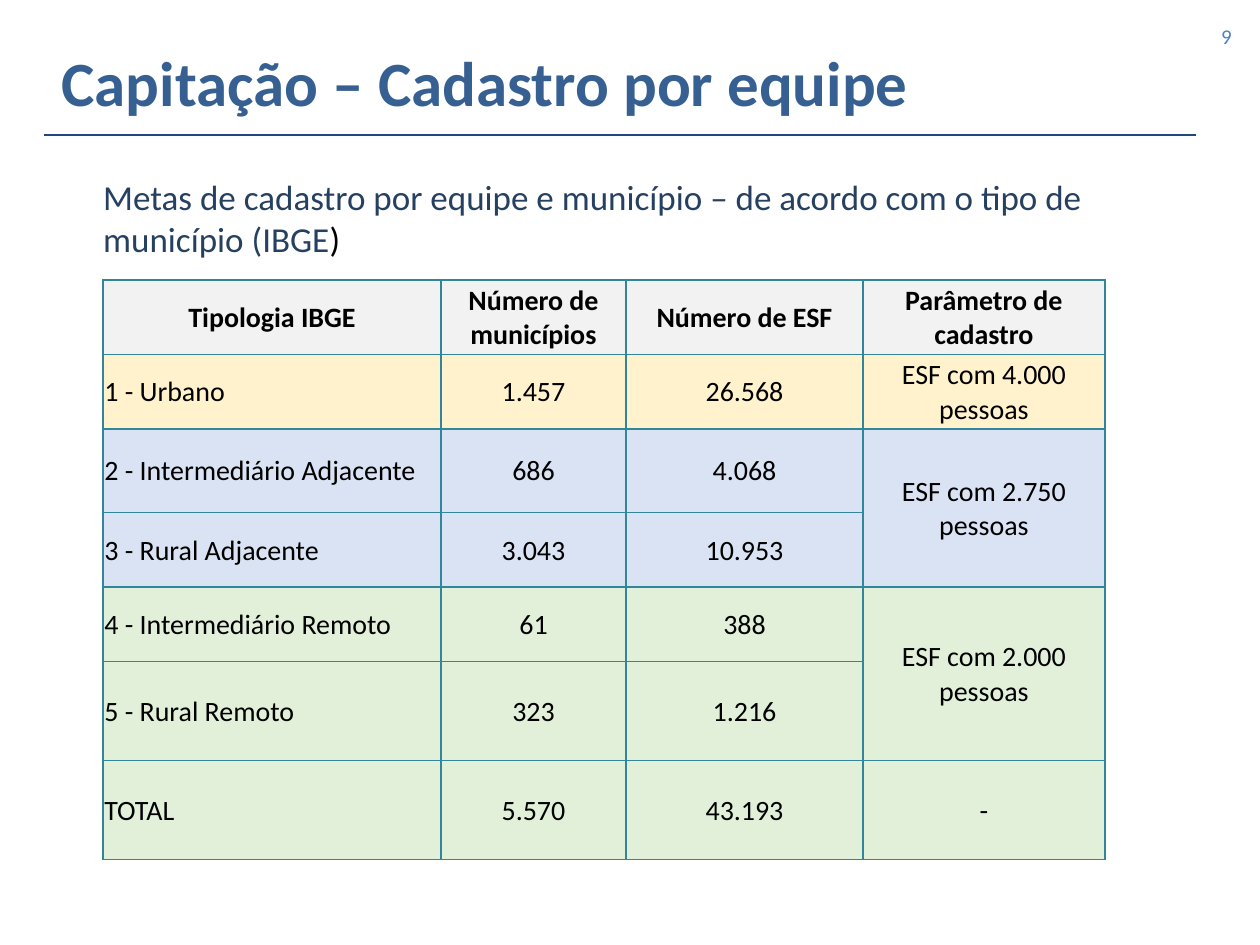
from lxml import etree
from pptx import Presentation
from pptx.dml.color import RGBColor
from pptx.enum.shapes import MSO_CONNECTOR
from pptx.enum.text import MSO_ANCHOR, MSO_AUTO_SIZE, PP_ALIGN
from pptx.oxml.ns import qn
from pptx.util import Pt

LEFT, CENTER, RIGHT = PP_ALIGN.LEFT, PP_ALIGN.CENTER, PP_ALIGN.RIGHT
MIDDLE = MSO_ANCHOR.MIDDLE
NO_FIT = MSO_AUTO_SIZE.NONE
STRAIGHT = MSO_CONNECTOR.STRAIGHT
TITLE_ONLY = 5
FONT = "Calibri"

COLORS = {
    "title": "376092",
    "subtitle": "254061",
    "text": "000000",
    "number": "4F81BD",
    "rule": "1F497D",
    "border": "31869B",
    "header": "F2F2F2",
    "urban": "FFF2CC",
    "adjacent": "DAE3F3",
    "remote": "E2F0D9",
}

COLUMN_WIDTHS = [193, 105.8, 135.4, 138.2]
ROW_HEIGHTS = [42.6, 42.6, 47.8, 42.6, 42.6, 56.5, 56.5]

# Fill name, then the cell texts; None continues the cell above
ROWS = [
    ("header", ["Tipologia IBGE", "Número de municípios", "Número de ESF",
                "Parâmetro de cadastro"]),
    ("urban", ["1 - Urbano", "1.457", "26.568", "ESF com 4.000 pessoas"]),
    ("adjacent", ["2 - Intermediário Adjacente", "686", "4.068",
                  "ESF com 2.750 pessoas"]),
    ("adjacent", ["3 - Rural Adjacente", "3.043", "10.953", None]),
    ("remote", ["4 - Intermediário Remoto", "61", "388",
                "ESF com 2.000 pessoas"]),
    ("remote", ["5 - Rural Remoto", "323", "1.216", None]),
    ("remote", ["TOTAL", "5.570", "43.193", "-"]),
]


def color(name):
    return RGBColor.from_string(COLORS[name])


def set_attributes(target, values):
    for name, value in values.items():
        setattr(target, name, value)


def add_span(para, text, size, color_name, bold=False):
    span = para.add_run()
    span.text = text
    set_attributes(span.font, {"name": FONT, "size": Pt(size), "bold": bold})
    span.font.color.rgb = color(color_name)


def format_frame(frame, inset=None):
    values = {"word_wrap": True, "auto_size": NO_FIT, "vertical_anchor": MIDDLE}
    if inset is not None:
        for side in ("left", "right", "top", "bottom"):
            values[f"margin_{side}"] = Pt(inset)
    set_attributes(frame, values)


def add_title(page, text):
    title = page.shapes.title
    set_attributes(title, {"left": Pt(28), "top": Pt(21),
                           "width": Pt(691), "height": Pt(56)})
    format_frame(title.text_frame)
    para = title.text_frame.paragraphs[0]
    set_attributes(para, {"alignment": LEFT, "line_spacing": 0.9})
    add_span(para, text, 36, "title", bold=True)


def add_text(page, place, spans, size, alignment=LEFT, inset=None):
    box = page.shapes.add_textbox(*map(Pt, place))
    format_frame(box.text_frame, inset)
    para = box.text_frame.paragraphs[0]
    para.alignment = alignment
    for text, color_name in spans:
        add_span(para, text, size, color_name)


def add_rule(page, left, right, height):
    rule = page.shapes.add_connector(
        STRAIGHT, Pt(left), Pt(height), Pt(right), Pt(height))
    rule.line.width = Pt(1)
    rule.line.color.rgb = color("rule")
    etree.SubElement(rule._element.spPr, qn("a:effectLst"))


def add_borders(cell):
    properties = cell._tc.get_or_add_tcPr()
    for side in ("a:lnL", "a:lnR", "a:lnT", "a:lnB"):
        line = etree.SubElement(properties, qn(side), w=str(Pt(1)))
        fill = etree.SubElement(line, qn("a:solidFill"))
        etree.SubElement(fill, qn("a:srgbClr"), val=COLORS["border"])


def format_cell(cell, fill_name):
    set_attributes(cell, {"vertical_anchor": MIDDLE, "margin_left": Pt(0.7),
                          "margin_right": Pt(0.7), "margin_top": Pt(0.7),
                          "margin_bottom": Pt(0)})
    add_borders(cell)
    cell.fill.solid()
    cell.fill.fore_color.rgb = color(fill_name)


def add_target_table(page, left, top):
    table = page.shapes.add_table(
        len(ROWS), len(COLUMN_WIDTHS), Pt(left), Pt(top),
        Pt(sum(COLUMN_WIDTHS)), Pt(sum(ROW_HEIGHTS))).table
    set_attributes(table, {"first_row": False, "horz_banding": False})
    for column, width in zip(table.columns, COLUMN_WIDTHS):
        column.width = Pt(width)
    for row, height in zip(table.rows, ROW_HEIGHTS):
        row.height = Pt(height)

    for row_index, (fill_name, texts) in enumerate(ROWS):
        is_header = row_index == 0
        for column_index, text in enumerate(texts):
            cell = table.cell(row_index, column_index)
            format_cell(cell, fill_name)
            if text is None:
                table.cell(row_index - 1, column_index).merge(cell)
                continue
            para = cell.text_frame.paragraphs[0]
            para.alignment = CENTER if is_header or column_index else LEFT
            add_span(para, text, 16, "text", bold=is_header)


def main():
    deck = Presentation()
    set_attributes(deck, {"slide_width": Pt(720), "slide_height": Pt(540)})
    page = deck.slides.add_slide(deck.slide_layouts[TITLE_ONLY])

    # Heading
    add_title(page, "Capitação – Cadastro por equipe")
    add_rule(page, 25.2, 683.3, 77)

    # Subtitle and table of targets
    subtitle = ("Metas de cadastro por equipe e município – de acordo com "
                "o tipo de município (IBGE")
    add_text(page, (59, 100, 629, 48.5),
             [(subtitle, "subtitle"), (")", "text")], 20, inset=0)
    add_target_table(page, 59, 160)

    # Page number
    add_text(page, (543, 6, 168, 29), [("9", "number")], 12, RIGHT)

    deck.save("out.pptx")


if __name__ == "__main__":
    main()
